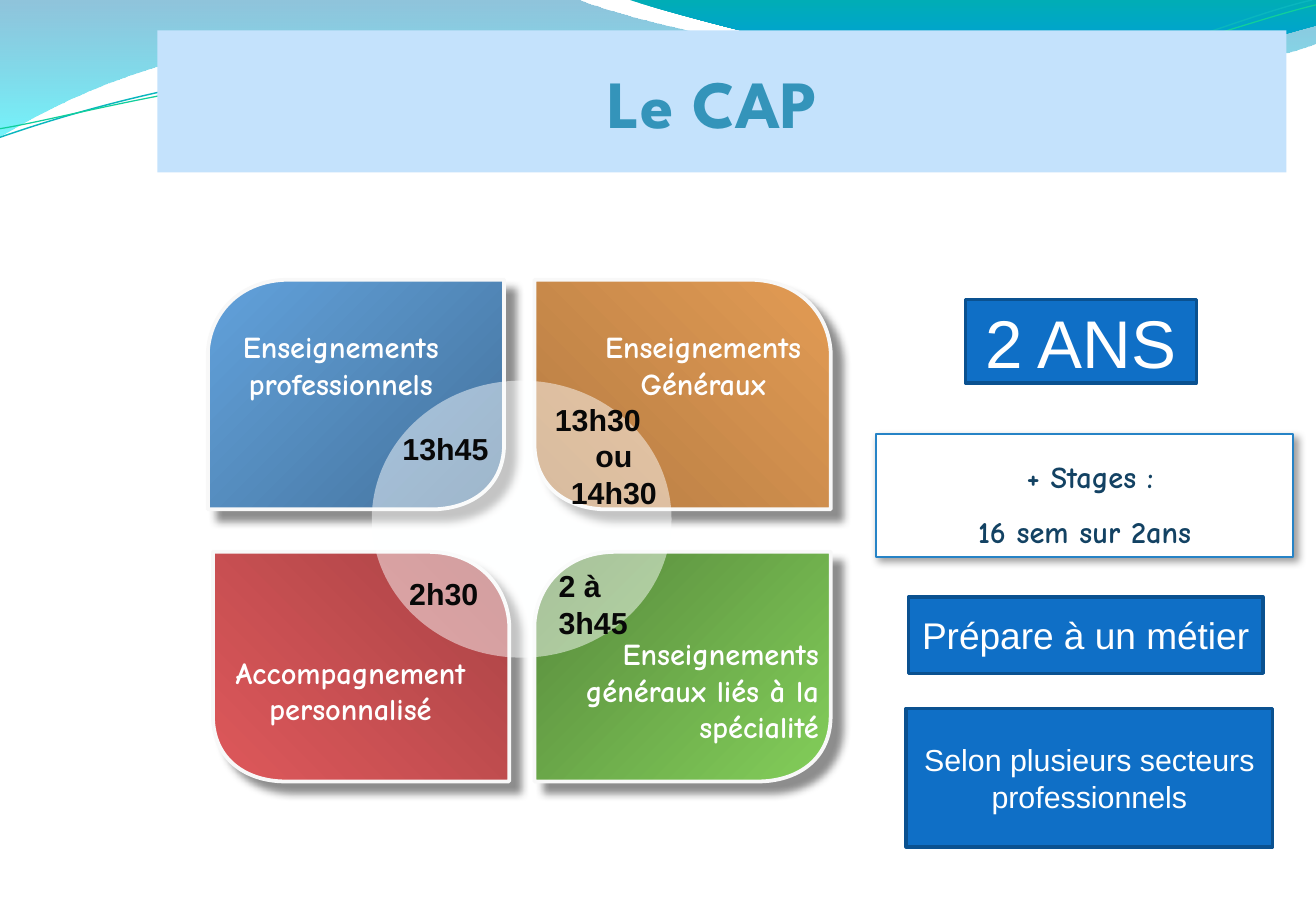
from lxml import etree
from pptx import Presentation
from pptx.dml import color
from pptx.enum import shapes, text
from pptx.oxml import ns
from pptx.util import Pt

WIDTH, HEIGHT = 780.48, 540
COMIC, ARIAL = "Comic Neue", "Arial"
LEFT, CENTER, RIGHT = text.PP_ALIGN.LEFT, text.PP_ALIGN.CENTER, text.PP_ALIGN.RIGHT


def rgb(code):
    """Turn a hex string into a colour."""
    return color.RGBColor.from_string(code)


def child(parent, tag, **attributes):
    """Append a DrawingML element to a parent."""
    return etree.SubElement(parent, ns.qn(tag), {k: str(v) for k, v in attributes.items()})


def paint_gradient(shape, stops, angle):
    """Fill a shape with (position, colour, opacity) stops along a clockwise angle."""
    properties = shape.element.spPr
    gradient = child(properties, "a:gradFill", rotWithShape=1)
    stop_list = child(gradient, "a:gsLst")
    for position, code, opacity in stops:
        stop = child(stop_list, "a:gs", pos=position * 1000)
        tint = child(stop, "a:srgbClr", val=code)
        child(tint, "a:alpha", val=opacity * 1000)
    child(gradient, "a:lin", ang=angle * 60000, scaled=0)
    properties.insert(2, gradient)


def outline(shape, code, width):
    """Give a shape a solid line."""
    shape.line.color.rgb = rgb(code)
    shape.line.width = Pt(width)


def cast_shadow(shape, code, opacity, distance):
    """Drop a soft shadow to the lower right."""
    effects = shape.element.spPr.find(ns.qn("a:effectLst"))
    shadow = child(effects, "a:outerShdw", blurRad=Pt(5), dist=Pt(distance),
                   dir=45 * 60000, algn="tl", rotWithShape=0)
    tint = child(shadow, "a:srgbClr", val=code)
    child(tint, "a:alpha", val=opacity * 1000)


def add_preset(slide, kind, box):
    """Add a preset shape without the theme shadow."""
    shape = slide.shapes.add_shape(kind, *map(Pt, box))
    shape.shadow.inherit = False
    return shape


def write(shape, lines, font, size, code, bold=False, anchor=text.MSO_ANCHOR.TOP, spacing=None):
    """Fill a shape with (wording, alignment) paragraphs."""
    frame = shape.text_frame
    frame.word_wrap = True
    frame.vertical_anchor = anchor
    for index, (wording, alignment) in enumerate(lines):
        paragraph = frame.add_paragraph() if index else frame.paragraphs[0]
        paragraph.text = wording
        paragraph.alignment = alignment
        paragraph.line_spacing = spacing
        paragraph.font.name = font
        paragraph.font.size = Pt(size)
        paragraph.font.bold = bold
        paragraph.font.color.rgb = rgb(code)


def add_curve(slide, origin, start, segments, close=True):
    """Draw an outline of straight (one point) and cubic (three points) segments."""
    points = [(Pt(origin[0] + x), Pt(origin[1] + y))
              for x, y in [start, *(point for segment in segments for point in segment)]]
    builder = slide.shapes.build_freeform(*points[0])
    builder.add_line_segments(points[1:], close=close)
    curve = builder.convert_to_shape()
    curve.shadow.inherit = False
    steps = iter(curve.element.spPr.findall(".//" + ns.qn("a:lnTo")))
    for segment in segments:
        group = [next(steps) for _ in segment]
        if len(group) == 3:
            cubic = etree.Element(ns.qn("a:cubicBezTo"))
            group[0].addprevious(cubic)
            for step in group:
                cubic.append(step[0])
                step.getparent().remove(step)
    return curve


def add_waves(slide, box):
    """Draw the two coloured bands and two thin lines along the top."""
    left, top, right, _ = box
    bands = [
        ((0, 0), [[(343.4, 0)],
                  [(370.8, 12.2), (517.7, 45.4), (591.8, 45.4)],
                  [(665.3, 45.4), (747.4, 18.7), (right, 6.5)],
                  [(right, 25.9)],
                  [(767.5, 31.7), (678.2, 54.7), (581.8, 54)],
                  [(485.3, 54), (298.1, 20.2), (200.9, 24.5)],
                  [(100.8, 25.2), (36, 59.8), (0, 81)]],
         [(0, "0079AF", 44), (100, "00EBF8", 55)]),
        ((373.7, 0), [[(397.4, 7.9), (532.1, 44.6), (599.8, 46.8)],
                      [(667.4, 49.7), (750.2, 23), (right, 15.1)],
                      [(right, 0)]],
         [(0, "00ADB6", 100), (80, "009BE5", 100), (100, "009BE5", 100)]),
    ]
    for start, segments, stops in bands:
        band = add_curve(slide, (left, top), start, segments)
        paint_gradient(band, stops, 90)
        band.line.fill.background()
    threads = [
        ((0, 81.4), [[(37.4, 68.4), (123.1, 41.8), (216, 38.2)],
                     [(308.2, 33.8), (462.2, 63.4), (555.8, 56.9)],
                     [(649.4, 49.7), (732.2, 10.1), (778.3, 0)]], "09B6BE", 0.85),
        ((0, 76.3), [[(36.7, 70.6), (127.4, 44.6), (221, 41)],
                     [(313.9, 37.4), (465.8, 59.8), (559.4, 53.3)],
                     [(652.3, 47.5), (734.4, 13.7), (right, 2.9)]], "10CF9B", 0.75),
    ]
    for start, segments, code, width in threads:
        thread = add_curve(slide, (left, top), start, segments, close=False)
        thread.fill.background()
        outline(thread, code, width)


def add_title(slide, box):
    """Place the title on its pale band, in front of the waves."""
    title = slide.shapes.title
    slide.shapes.element.append(title.element)
    title.left, title.top, title.width, title.height = map(Pt, box)
    title.fill.solid()
    title.fill.fore_color.rgb = rgb("C4E2FC")
    write(title, [("Le CAP ", CENTER)], "League Spartan", 40, "3494BA", True,
          text.MSO_ANCHOR.MIDDLE)
    title.text_frame.auto_size = text.MSO_AUTO_SIZE.NONE


def add_petal(slide, box, mirrored):
    """Draw a petal rounded at two opposite corners, more widely at the top."""
    left, top, width, height = box
    start = (134.6, height)
    segments = [[(0, height)], [(0, 42.5)],
                [(1.4, 20.2), (18.7, 0), (48.2, 0)],
                [(width, 0)], [(width, 97.2)],
                [(width, 123.1), (156.2, 135.4), start]]
    if mirrored:
        start = (width - start[0], height)
        segments = [[(width - x, y) for x, y in segment] for segment in segments]
    return add_curve(slide, (left, top), start, segments)


def add_teaching_hours(slide, box):
    """Draw the four petals, the central disc and their labels."""
    left, top, width, height = box
    petal_width, petal_height = 175.7, 136.1
    column, row = width - petal_width, height - petal_height
    petals = [
        (0, 0, "44719A", "62A2DC", False),
        (column, 0, "B57C43", "E29B54", True),
        (3, row, "DE585B", "A94345", True),
        (column, row, "83CE5A", "57893C", False),
    ]
    for x, y, first, last, mirrored in petals:
        petal = add_petal(slide, (left + x, top + y, petal_width, petal_height), mirrored)
        paint_gradient(petal, [(0, first, 100), (100, last, 100)], 315 if mirrored else 225)
        outline(petal, "F8F8F8", 2.25)
        cast_shadow(petal, "1C1C1C", 49, 8.5)

    disc = add_preset(slide, shapes.MSO_SHAPE.OVAL, (left + 97.2, top + 59.8, 177.8, 164.2))
    disc.fill.solid()
    disc.fill.fore_color.rgb = rgb("FEFFFF")
    child(disc.element.spPr.find(".//" + ns.qn("a:srgbClr")), "a:alpha", val=49000)
    disc.line.fill.background()

    subjects = [
        ((2.9, 25.2, 151.9, 51.1), [("Enseignements professionnels", CENTER)]),
        ((219.6, 25.2, 148.3, 51.1), [("Enseignements Généraux", CENTER)]),
        ((-0.7, 218.2, 170.6, 50.4), [("Accompagnement personnalisé", CENTER)]),
        ((column, 207.4, 175.7, 72.7), [("Enseignements généraux liés à la spécialité", RIGHT)]),
    ]
    hours = [
        ((107, 85.7, 66.5, 29.5), [("13h45", RIGHT)]),
        ((198.7, 68.4, 84.2, 72.7), [("13h30", LEFT), ("ou 14h30", CENTER)]),
        ((112.3, 171.4, 56.4, 29.5), [("2h30", LEFT)]),
        ((200.9, 167, 56.4, 51.1), [("2 à", LEFT), ("3h45", LEFT)]),
    ]
    for labels, font, code in ((subjects, COMIC, "FFFFFF"), (hours, ARIAL, "080808")):
        for (x, y, w, h), lines in labels:
            label = slide.shapes.add_textbox(*map(Pt, (left + x, top + y, w, h)))
            write(label, lines, font, 18, code, True)


def add_key_facts(slide, box):
    """Stack the internship card and the blue fact cards."""
    left, top, width, _ = box
    internships = add_preset(slide, shapes.MSO_SHAPE.RECTANGLE, (left, top + 79.9, width, 72.7))
    internships.fill.solid()
    internships.fill.fore_color.rgb = rgb("FFFFFF")
    outline(internships, "2683C6", 1.25)
    cast_shadow(internships, "000000", 39, 3)
    write(internships, [(" + Stages :", CENTER), ("16 sem sur 2ans", CENTER)],
          COMIC, 18, "134263", True, spacing=1.5)
    facts = [
        ((53.3, 0, 136.8, 49.7), "2 ANS", 40),
        ((19.4, 176.4, 210.2, 45.4), "Prépare à un métier", 22),
        ((18, 242.6, 217.4, 82.1), "Selon plusieurs secteurs professionnels", 18),
    ]
    for (x, y, w, h), wording, size in facts:
        fact = add_preset(slide, shapes.MSO_SHAPE.RECTANGLE, (left + x, top + y, w, h))
        fact.fill.solid()
        fact.fill.fore_color.rgb = rgb("0F6FC6")
        outline(fact, "0A5190", 2)
        write(fact, [(wording, CENTER)], ARIAL, size, "FFFFFF", anchor=text.MSO_ANCHOR.MIDDLE)


def main():
    """Build the slide and save it."""
    deck = Presentation()
    deck.slide_width, deck.slide_height = Pt(WIDTH), Pt(HEIGHT)
    slide = deck.slides.add_slide(deck.slide_layouts[5])
    add_waves(slide, (0, 0, WIDTH, 82))
    add_title(slide, (93.4, 18, 669.6, 84.2))
    add_teaching_hours(slide, (123.3, 165.8, 369.4, 297.4))
    add_key_facts(slide, (519.4, 177.4, 247.7, 324.7))
    deck.save("out.pptx")


if __name__ == "__main__":
    main()
